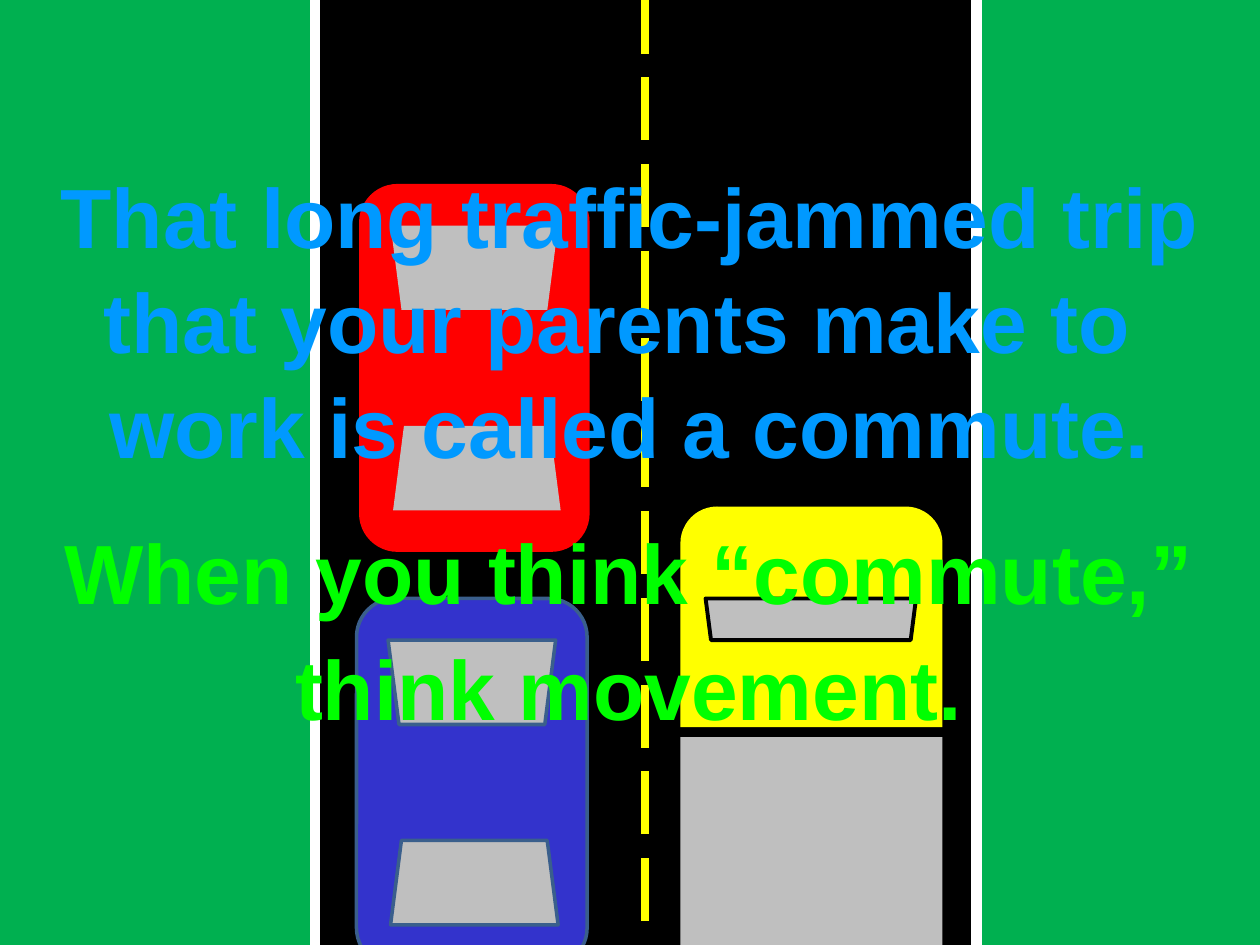
from lxml import etree
from pptx import Presentation
from pptx.dml.color import RGBColor
from pptx.enum.dml import MSO_LINE
from pptx.enum.shapes import MSO_CONNECTOR, MSO_SHAPE
from pptx.enum.text import MSO_AUTO_SIZE, PP_ALIGN
from pptx.oxml.ns import qn
from pptx.util import Inches, Pt

RECTANGLE = MSO_SHAPE.RECTANGLE
ROUNDED = MSO_SHAPE.ROUNDED_RECTANGLE
ROUNDED_TOP = MSO_SHAPE.ROUND_2_SAME_RECTANGLE
TRAPEZOID = MSO_SHAPE.TRAPEZOID
STRAIGHT = MSO_CONNECTOR.STRAIGHT
LONG_DASH = MSO_LINE.LONG_DASH
CENTER = PP_ALIGN.CENTER
GROW = MSO_AUTO_SIZE.SHAPE_TO_FIT_TEXT

GRASS, ASPHALT, WHITE, YELLOW = "00B050", "000000", "FFFFFF", "FFFF00"
RED, BLUE, GRAY, OUTLINE = "FF0000", "3333CC", "BFBFBF", "3A5F8C"
SKY, LIME = "0099FF", "00FF00"
CAR_OUTLINE = (OUTLINE, 2)

TEXT_LINES = [
    ("That long traffic-jammed trip", 0, 1.26, 10, SKY),
    ("that your parents make to ", -0.02, 2.09, 10.02, SKY),
    ("work is called a commute.", 0, 2.92, 10, SKY),
    ("When you think “commute,”", -0.02, 4.08, 10.02, LIME),
    ("think movement.", -0.02, 5, 10.02, LIME),
]


def color(value):
    return RGBColor.from_string(value)


def set_attributes(target, values):
    for name, value in values.items():
        setattr(target, name, value)


def set_fill(fill, value):
    fill.solid()
    fill.fore_color.rgb = color(value)


def set_line(line, value, width):
    line.color.rgb = color(value)
    line.width = Pt(width)


def add_block(group, kind, box, fill, outline=None):
    shape = group.shapes.add_shape(kind, *map(Inches, box))
    shape.shadow.inherit = False
    set_fill(shape.fill, fill)
    if outline:
        set_line(shape.line, *outline)
    else:
        shape.line.fill.background()
    return shape


def add_window(group, box, outline=None, rotation=0):
    window = add_block(group, TRAPEZOID, box, GRAY, outline)
    window.adjustments[0] = 0.129
    window.rotation = rotation


def add_road(slide):
    group = slide.shapes.add_group_shape()
    add_block(group, RECTANGLE, (2.5, -3.08, 5.25, 13.92), ASPHALT, (WHITE, 6))
    center_line = group.shapes.add_connector(
        STRAIGHT, *map(Inches, (5.12, -2.83, 5.12, 9.92)))
    set_line(center_line.line, YELLOW, 4.5)
    center_line.line.dash_style = LONG_DASH
    etree.SubElement(center_line._element.spPr, qn("a:effectLst"))


def add_car(slide, left, top, fill, outline=None):
    group = slide.shapes.add_group_shape()
    add_block(group, ROUNDED, (left, top, 1.83, 2.92), fill, outline)
    add_window(group, (left + 0.25, top + 0.33, 1.33, 0.67), outline, 180)
    add_window(group, (left + 0.27, top + 1.92, 1.33, 0.67), outline)


def add_truck(slide):
    group = slide.shapes.add_group_shape()
    add_block(group, RECTANGLE, (5.4, 5.85, 2.08, 4.83), GRAY)
    add_block(group, ROUNDED_TOP, (5.4, 4.02, 2.08, 1.75), YELLOW)
    add_window(group, (5.6, 4.75, 1.67, 0.33), (ASPHALT, 2.25), 180)


def add_text_line(slide, text, left, top, width, text_color):
    box = slide.shapes.add_textbox(*map(Inches, (left, top, width, 0.91)))
    set_attributes(box.text_frame, {"word_wrap": True, "auto_size": GROW})
    paragraph = box.text_frame.paragraphs[0]
    paragraph.alignment = CENTER
    run = paragraph.add_run()
    run.text = text
    set_attributes(run.font, {"name": "Arial", "size": Pt(48), "bold": True})
    run.font.color.rgb = color(text_color)


def main():
    presentation = Presentation()
    set_attributes(presentation, {
        "slide_width": Inches(10), "slide_height": Inches(7.5)})
    slide = presentation.slides.add_slide(presentation.slide_layouts[6])
    set_fill(slide.background.fill, GRASS)
    add_road(slide)
    add_car(slide, 2.83, 4.75, BLUE, CAR_OUTLINE)
    add_car(slide, 2.85, 1.46, RED)
    add_truck(slide)
    for text_line in TEXT_LINES:
        add_text_line(slide, *text_line)
    presentation.save("out.pptx")


if __name__ == "__main__":
    main()
